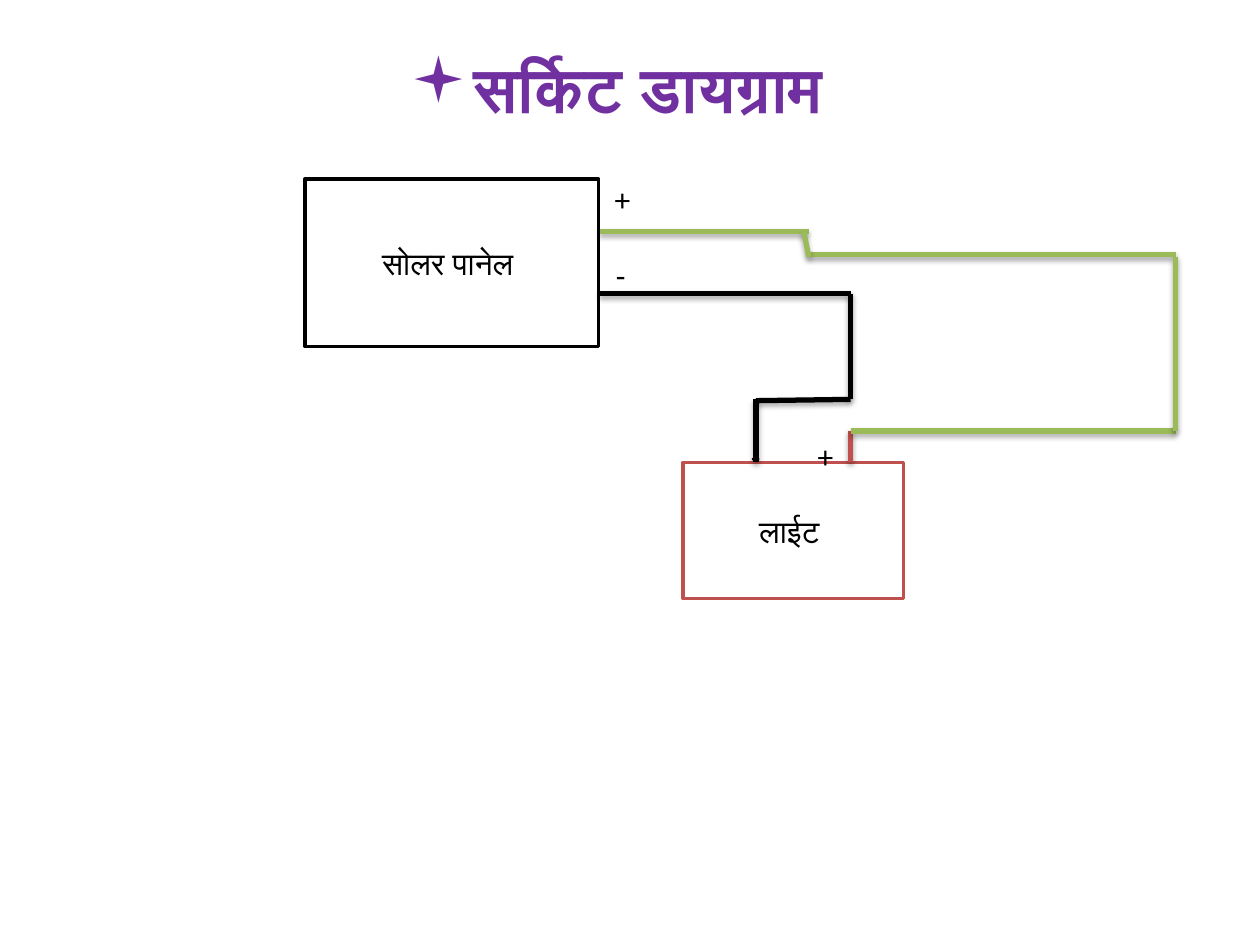
from lxml import etree
from pptx import Presentation
from pptx.dml.color import RGBColor
from pptx.enum.shapes import MSO_CONNECTOR, MSO_SHAPE
from pptx.enum.text import MSO_ANCHOR, PP_ALIGN
from pptx.oxml.ns import qn
from pptx.util import Inches, Pt

RECTANGLE = MSO_SHAPE.RECTANGLE
STRAIGHT = MSO_CONNECTOR.STRAIGHT
CENTER, LEFT = PP_ALIGN.CENTER, PP_ALIGN.LEFT
MIDDLE = MSO_ANCHOR.MIDDLE

BLACK, WHITE, RED, GREEN, PURPLE = "000000", "FFFFFF", "C0504D", "9BBB59", "7030A0"

# Content
TITLE = "सर्किट डायग्राम"
PARTS = [  # label, left, top, width, height, outline
    ("सोलर पानेल", 2.42, 1.42, 2.33, 1.33, BLACK),
    ("लाईट", 5.42, 3.67, 1.75, 1.08, RED),
]
WIRES = [  # colour, start, end
    (GREEN, (4.76, 1.84), (6.42, 1.84)),
    (BLACK, (4.76, 2.33), (6.75, 2.33)),
    (GREEN, (6.42, 2.02), (9.33, 2.02)),
    (RED, (6.75, 3.67), (6.75, 3.42)),
    (BLACK, (6, 3.17), (6, 3.67)),
    (GREEN, (6.42, 2.04), (6.38, 1.84)),
    (BLACK, (6.75, 2.33), (6.75, 3.17)),
    (GREEN, (6.75, 3.42), (9.33, 3.42)),
    (GREEN, (9.33, 3.42), (9.33, 2.04)),
    (BLACK, (6, 3.18), (6.75, 3.17)),
]
PANEL_SIGNS = "+\n-"
LIGHT_SIGNS = "-\t+"


def color(value):
    return RGBColor.from_string(value)


def write(frame, text, size=18, font="Calibri", fill=BLACK, bold=False, align=CENTER):
    frame.text = text
    for paragraph in frame.paragraphs:
        paragraph.alignment = align
        for span in paragraph.runs:
            span.font.size = Pt(size)
            span.font.name = font
            span.font.bold = bold
            span.font.color.rgb = color(fill)


def add_part(page, label, left, top, width, height, outline):
    box = page.shapes.add_shape(
        RECTANGLE, Inches(left), Inches(top), Inches(width), Inches(height))
    box.shadow.inherit = False
    box.fill.solid()
    box.fill.fore_color.rgb = color(WHITE)
    box.line.color.rgb = color(outline)
    box.line.width = Pt(2)
    frame = box.text_frame
    frame.vertical_anchor = MIDDLE
    frame.margin_right = Inches(0.16)
    write(frame, label)


def add_wire(page, stroke, start, end):
    wire = page.shapes.add_connector(STRAIGHT, *map(Inches, start + end))
    wire.line.color.rgb = color(stroke)
    wire.line.width = Pt(3)
    effects = etree.SubElement(wire._element.spPr, qn("a:effectLst"))
    shadow = etree.SubElement(
        effects, qn("a:outerShdw"), blurRad=str(Pt(3.1)), dist=str(Pt(1.8)),
        dir="5400000", rotWithShape="0")
    tint = etree.SubElement(shadow, qn("a:srgbClr"), val=BLACK)
    etree.SubElement(tint, qn("a:alpha"), val="35000")


def add_signs(page, text, left, top, width, height, align):
    box = page.shapes.add_textbox(
        Inches(left), Inches(top), Inches(width), Inches(height))
    box.text_frame.word_wrap = True
    write(box.text_frame, text, align=align)
    return box.text_frame


def add_title(page):
    title = page.shapes.title
    title.left, title.top = Inches(0.08), Inches(0.01)
    title.width, title.height = Inches(9.92), Inches(1.37)
    frame = title.text_frame
    frame.vertical_anchor = MIDDLE
    frame.margin_right = Inches(0.39)
    write(frame, TITLE, 36, "Montserrat", PURPLE, True)
    # Square bullet with a hanging indent
    properties = frame.paragraphs[0]._p.get_or_add_pPr()
    properties.set("marL", str(Inches(0.38)))
    properties.set("indent", str(Inches(-0.38)))
    etree.SubElement(properties, qn("a:buFont"), typeface="Wingdings")
    etree.SubElement(properties, qn("a:buChar"), char="▪")


def main():
    deck = Presentation()
    deck.slide_width, deck.slide_height = Inches(10), Inches(7.5)
    page = deck.slides.add_slide(deck.slide_layouts[5])
    add_title(page)

    # Circuit parts and wires
    for part in PARTS:
        add_part(page, *part)
    for wire in WIRES:
        add_wire(page, *wire)

    # Polarity signs
    panel = add_signs(page, PANEL_SIGNS, 4.78, 1.38, 0.29, 1.01, CENTER)
    panel.paragraphs[1].space_before = Pt(22)
    light = add_signs(page, LIGHT_SIGNS, 5.71, 3.42, 1.56, 0.4, LEFT)
    light.margin_left = Inches(0.25)
    tabs = etree.SubElement(light.paragraphs[0]._p.get_or_add_pPr(), qn("a:tabLst"))
    etree.SubElement(tabs, qn("a:tab"), pos=str(Inches(0.53)), algn="l")

    deck.save("out.pptx")


if __name__ == "__main__":
    main()
